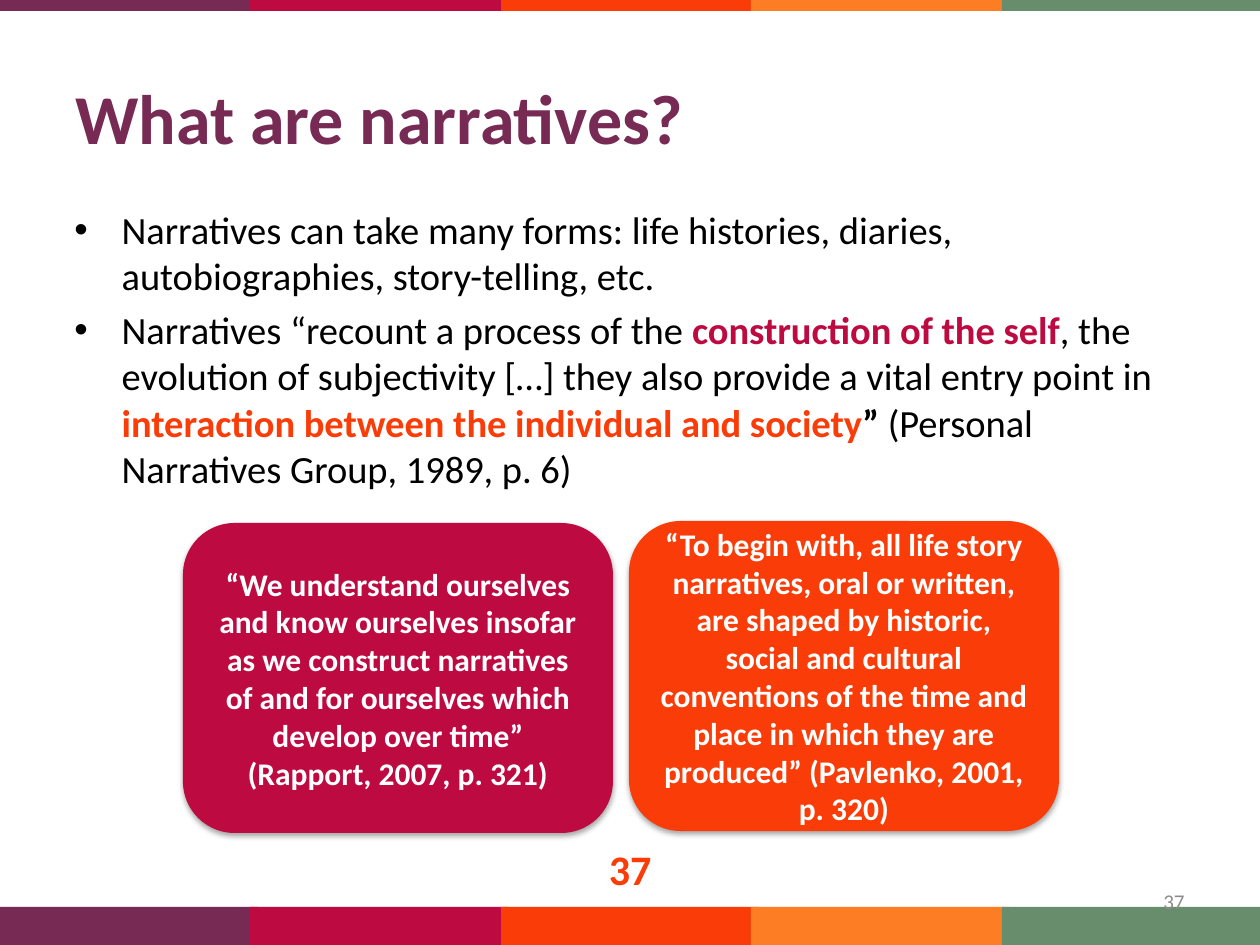
from lxml import etree
from pptx import Presentation
from pptx.dml.color import RGBColor
from pptx.enum.shapes import MSO_SHAPE
from pptx.enum.text import MSO_ANCHOR, PP_ALIGN
from pptx.oxml import parse_xml
from pptx.oxml.ns import nsdecls, qn
from pptx.util import Emu, Pt

PLUM = RGBColor(0x77, 0x2A, 0x53)
CRIMSON = RGBColor(0xBD, 0x0A, 0x41)
ORANGE = RGBColor(0xFA, 0x3C, 0x08)
AMBER = RGBColor(0xFC, 0x7D, 0x23)
GREEN = RGBColor(0x67, 0x8D, 0x6C)
BLACK = RGBColor(0, 0, 0)
WHITE = RGBColor(0xFF, 0xFF, 0xFF)
GREY = RGBColor(0x8C, 0x8C, 0x8C)
SHADOW = (
    f'<a:effectLst {nsdecls("a")}>'
    '<a:outerShdw blurRad="39370" dist="22860" dir="5400000" rotWithShape="0">'
    '<a:srgbClr val="000000"><a:alpha val="35000"/></a:srgbClr>'
    '</a:outerShdw></a:effectLst>'
)


def px(*lengths):
    return [Emu(length * 914400 // 126) for length in lengths]


def style(run, size, color, bold=False):
    run.font.name = "Calibri"
    run.font.size = Pt(size)
    run.font.color.rgb = color
    run.font.bold = bold


presentation = Presentation()
presentation.slide_width, presentation.slide_height = px(1260, 945)
slide = presentation.slides.add_slide(presentation.slide_layouts[5])

for top, height in [(0, 11), (907, 38)]:
    for column, color in enumerate([PLUM, CRIMSON, ORANGE, AMBER, GREEN]):
        left = column * (1260 - 258) // 4
        band = slide.shapes.add_shape(MSO_SHAPE.RECTANGLE, *px(left, top, 258, height))
        band.shadow.inherit = False
        band.fill.solid()
        band.fill.fore_color.rgb = color
        band.line.fill.background()

title = slide.shapes.title
title.left, title.top, title.width, title.height = px(63, 38, 1134, 157)
title.text_frame.text = "What are narratives?"
title.text_frame.vertical_anchor = MSO_ANCHOR.MIDDLE
title.text_frame.paragraphs[0].alignment = PP_ALIGN.LEFT
style(title.text_frame.paragraphs[0].runs[0], 40, PLUM, True)

bullets = [
    [("Narratives can take many forms: life histories, diaries, "
      "autobiographies, story-telling, etc.", BLACK, False)],
    [("Narratives “recount a process of the ", BLACK, False),
     ("construction of the self", CRIMSON, True),
     (", the evolution of subjectivity […] they also provide a vital "
      "entry point in ", BLACK, False),
     ("interaction between the individual and society", ORANGE, True),
     ("” ", BLACK, True),
     ("(Personal Narratives Group, 1989, p. 6)", BLACK, False)],
]
body = slide.shapes.add_textbox(*px(62, 200, 1134, 624))
body.text_frame.word_wrap = True
for index, pieces in enumerate(bullets):
    if index == 0:
        paragraph = body.text_frame.paragraphs[0]
    else:
        paragraph = body.text_frame.add_paragraph()
        paragraph.space_before = Pt(4.4)
    properties = paragraph._p.get_or_add_pPr()
    properties.set("marL", "342900")
    properties.set("indent", "-342900")
    etree.SubElement(properties, qn("a:buFont")).set("typeface", "Arial")
    etree.SubElement(properties, qn("a:buChar")).set("char", "•")
    for text, color, bold in pieces:
        run = paragraph.add_run()
        run.text = text
        style(run, 22, color, bold)

page_numbers = [
    (903, 876, PP_ALIGN.RIGHT, 12, GREY, False),
    (483, 844, PP_ALIGN.CENTER, 24, ORANGE, True),
]
for left, top, alignment, size, color, bold in page_numbers:
    number = slide.shapes.add_textbox(*px(left, top, 294, 50))
    number.text_frame.word_wrap = True
    number.text_frame.vertical_anchor = MSO_ANCHOR.MIDDLE
    number.text_frame.text = "37"
    paragraph = number.text_frame.paragraphs[0]
    paragraph.alignment = alignment
    style(paragraph.runs[0], size, color, bold)

quotes = [
    (183, 523, CRIMSON,
     "“We understand ourselves and know ourselves insofar as we construct "
     "narratives of and for ourselves which develop over time” "
     "(Rapport, 2007, p. 321)"),
    (629, 521, ORANGE,
     "“To begin with, all life story narratives, oral or written, are shaped "
     "by historic, social and cultural conventions of the time and place in "
     "which they are produced” (Pavlenko, 2001, p. 320)"),
]
for left, top, color, text in quotes:
    quote = slide.shapes.add_shape(MSO_SHAPE.ROUNDED_RECTANGLE, *px(left, top, 430, 310))
    quote.fill.solid()
    quote.fill.fore_color.rgb = color
    quote.line.fill.background()
    quote._element.spPr.append(parse_xml(SHADOW))
    quote.text_frame.word_wrap = True
    quote.text_frame.vertical_anchor = MSO_ANCHOR.MIDDLE
    quote.text_frame.text = text
    paragraph = quote.text_frame.paragraphs[0]
    paragraph.alignment = PP_ALIGN.CENTER
    style(paragraph.runs[0], 18, WHITE, True)

presentation.save("out.pptx")
